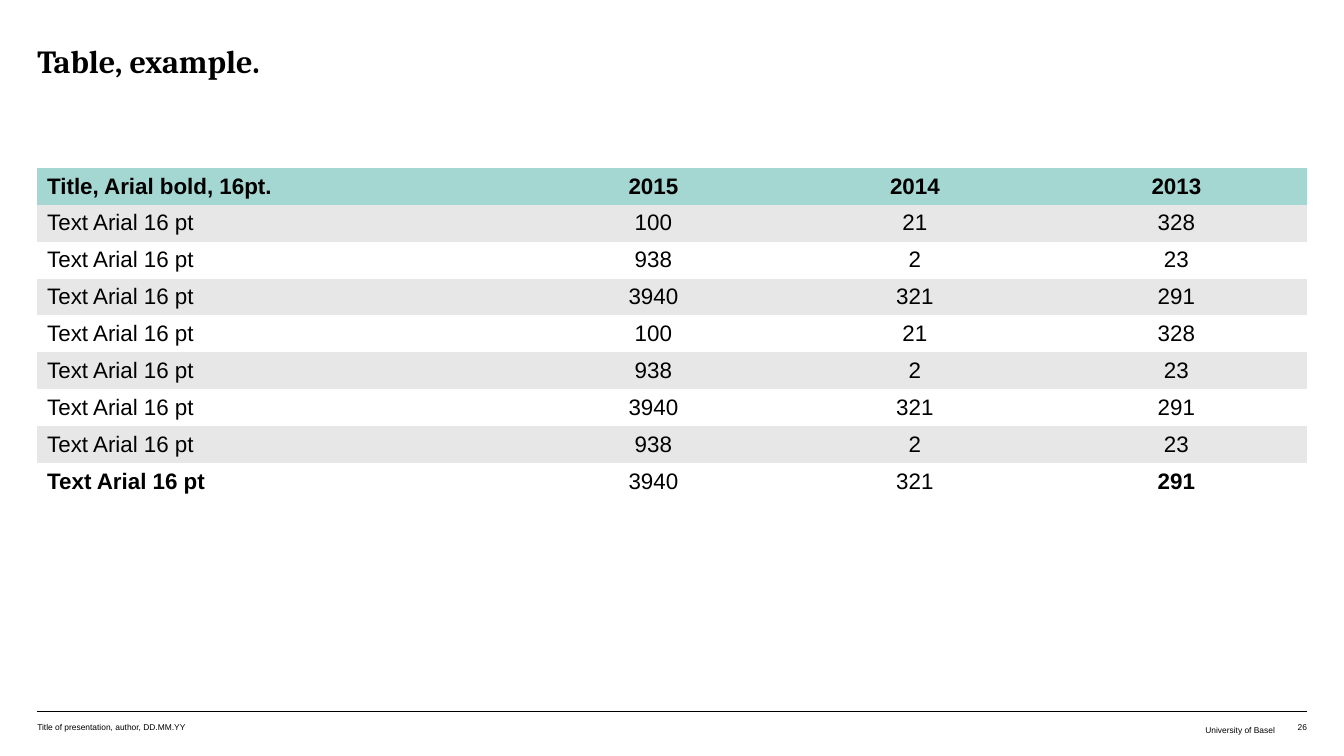
from dataclasses import dataclass

from lxml import etree
from pptx import Presentation
from pptx.dml.color import RGBColor
from pptx.enum.shapes import MSO_CONNECTOR
from pptx.enum.text import MSO_ANCHOR, MSO_AUTO_SIZE, PP_ALIGN
from pptx.oxml.ns import qn
from pptx.util import Cm, Pt

LEFT, CENTER, RIGHT = PP_ALIGN.LEFT, PP_ALIGN.CENTER, PP_ALIGN.RIGHT
TOP, MIDDLE = MSO_ANCHOR.TOP, MSO_ANCHOR.MIDDLE
NO_AUTOFIT = MSO_AUTO_SIZE.NONE
STRAIGHT = MSO_CONNECTOR.STRAIGHT
TITLE_ONLY = 5
NO_STYLE_NO_GRID = "{2D5ABB26-0587-4C30-8999-92F81FD0307C}"


@dataclass(frozen=True)
class Theme:
    ink: RGBColor = RGBColor(0, 0, 0)
    header: RGBColor = RGBColor(0xA5, 0xD7, 0xD2)
    band: RGBColor = RGBColor(0xE7, 0xE7, 0xE7)
    paper: RGBColor = RGBColor(0xFF, 0xFF, 0xFF)
    title_font: str = "Cambria"
    body_font: str = "Arial"
    title_size: int = 23
    table_size: int = 16
    footer_size: int = 6


THEME = Theme()

# Shared page edges, in centimetres
MARGIN = 0.94
CONTENT_W = 32
FOOTER_TOP = 18.14

# Table content
LABEL = "Text Arial 16 pt"
HEADER = ("Title, Arial bold, 16pt.", "2015", "2014", "2013")
SERIES = (("100", "21", "328"), ("938", "2", "23"), ("3940", "321", "291"))
ROW_ORDER = (0, 1, 2, 0, 1, 2, 1, 2)
COLUMN_WIDTHS = (12.23, 6.59, 6.59, 6.59)
ROW_HEIGHT = 0.93


def add_run(p, text, size, font=THEME.body_font, bold=False):
    r = p.add_run()
    r.text = text
    r.font.name = font
    r.font.size = Pt(size)
    r.font.bold = bold
    r.font.color.rgb = THEME.ink


def format_frame(tf, left=0, top=0, right=0, bottom=0):
    tf.margin_left, tf.margin_top = Cm(left), Cm(top)
    tf.margin_right, tf.margin_bottom = Cm(right), Cm(bottom)
    tf.word_wrap = True
    tf.auto_size = NO_AUTOFIT
    tf.vertical_anchor = TOP


def set_title(s, text):
    title = s.shapes.title
    title.left, title.top = Cm(MARGIN), Cm(1.12)
    title.width, title.height = Cm(CONTENT_W), Cm(2.1)
    tf = title.text_frame
    format_frame(tf)
    p = tf.paragraphs[0]
    p.alignment = LEFT
    p.line_spacing = Pt(25)
    add_run(p, text, THEME.title_size, THEME.title_font, True)


def add_footer_text(s, text, left, width, align, insets):
    box = s.shapes.add_textbox(Cm(left), Cm(FOOTER_TOP), Cm(width), Cm(0.51))
    tf = box.text_frame
    format_frame(tf, *insets)
    p = tf.paragraphs[0]
    p.alignment = align
    add_run(p, text, THEME.footer_size)


def add_rule(s, y):
    line = s.shapes.add_connector(
        STRAIGHT, Cm(MARGIN), Cm(y), Cm(MARGIN + CONTENT_W), Cm(y))
    line.line.color.rgb = THEME.ink
    line.line.width = Pt(0.25)
    etree.SubElement(line._element.spPr, qn("a:effectLst"))


def fill_cell(cell, text, fill, align, bold):
    cell.fill.solid()
    cell.fill.fore_color.rgb = fill
    cell.margin_left = cell.margin_right = Cm(0.25)
    cell.margin_top = cell.margin_bottom = Cm(0.14)
    cell.vertical_anchor = MIDDLE
    p = cell.text_frame.paragraphs[0]
    p.alignment = align
    add_run(p, text, THEME.table_size, bold=bold)


def add_data_table(s, rows):
    frame = s.shapes.add_table(
        len(rows), len(COLUMN_WIDTHS), Cm(MARGIN), Cm(4.23),
        Cm(CONTENT_W), Cm(ROW_HEIGHT * len(rows)))
    table = frame.table
    table.horz_banding = False
    frame._element.xpath(".//a:tableStyleId")[0].text = NO_STYLE_NO_GRID
    for column, width in zip(table.columns, COLUMN_WIDTHS):
        column.width = Cm(width)
    last_row, last_col = len(rows) - 1, len(COLUMN_WIDTHS) - 1
    for i, row in enumerate(rows):
        table.rows[i].height = Cm(ROW_HEIGHT)
        fill = THEME.band if i % 2 else THEME.paper
        if i == 0:
            fill = THEME.header
        for j, text in enumerate(row):
            bold = i == 0 or (i == last_row and j in (0, last_col))
            fill_cell(table.cell(i, j), text, fill, CENTER if j else LEFT, bold)


def main():
    prs = Presentation()
    prs.slide_width, prs.slide_height = Cm(33.87), Cm(19.05)
    s = prs.slides.add_slide(prs.slide_layouts[TITLE_ONLY])

    # Title and table
    set_title(s, "Table, example.")
    add_data_table(s, [HEADER] + [(LABEL, *SERIES[k]) for k in ROW_ORDER])

    # Footer
    add_rule(s, 17.93)
    tight = (0, 0.05, 0, 0)
    add_footer_text(s, "Title of presentation, author, DD.MM.YY",
                    MARGIN, 8, LEFT, tight)
    add_footer_text(s, "University of Basel", 25.32, 7.06, RIGHT,
                    (0.25, 0.13, 0.25, 0.13))
    add_footer_text(s, "26", 32.41, 0.53, RIGHT, tight)

    prs.save("out.pptx")


if __name__ == "__main__":
    main()
